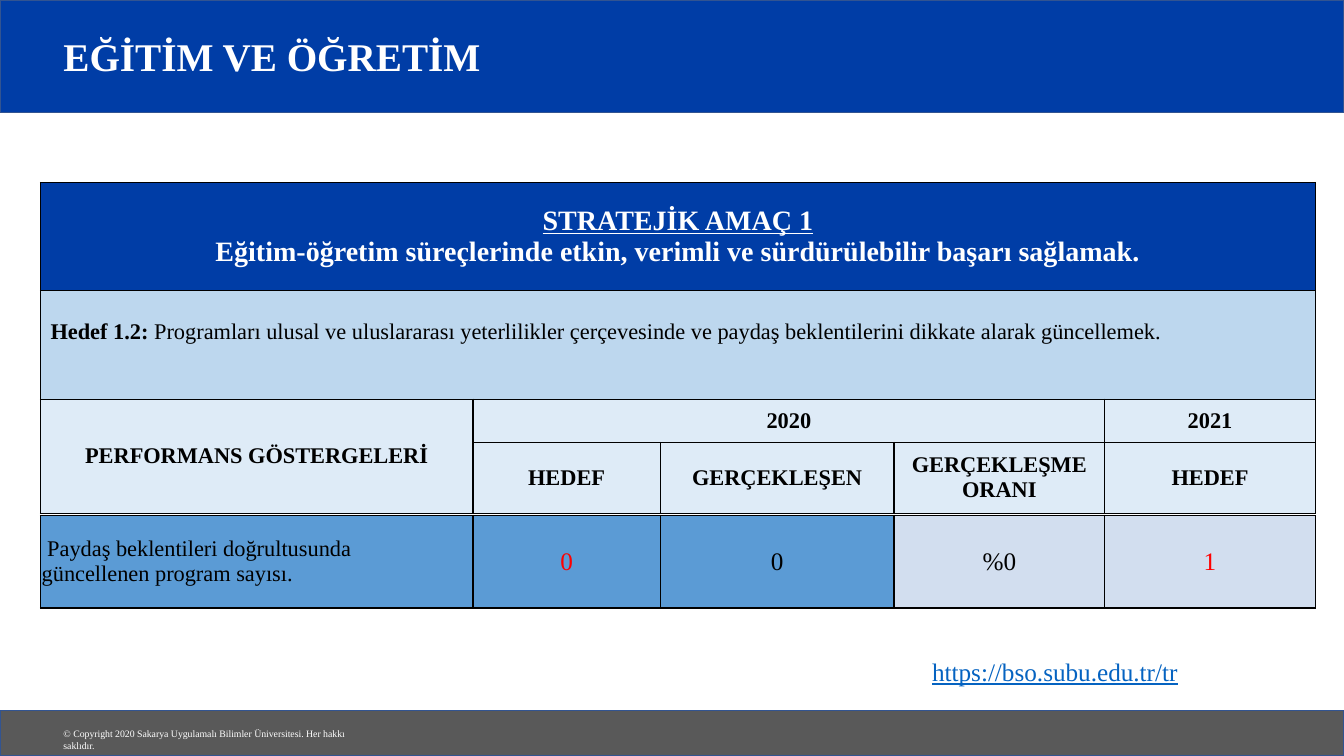
from lxml import etree
from pptx import Presentation
from pptx.dml.color import RGBColor
from pptx.enum.shapes import MSO_SHAPE
from pptx.enum.text import MSO_ANCHOR, PP_ALIGN
from pptx.oxml.ns import qn
from pptx.util import Cm, Pt

RECTANGLE = MSO_SHAPE.RECTANGLE
MIDDLE = MSO_ANCHOR.MIDDLE
LEFT, CENTER, JUSTIFY = PP_ALIGN.LEFT, PP_ALIGN.CENTER, PP_ALIGN.JUSTIFY
FONT = "Times New Roman"
COLORS = {
    "navy": "003DA6", "edge": "325491", "gray": "595959", "white": "FFFFFF",
    "black": "000000", "red": "FF0000", "link": "0563C1", "goal": "BDD7EE",
    "head": "DEEBF7", "measure": "5B9BD5", "result": "D2DEEF",
}


def style(paragraph, size, color, bold=False, underline=False, align=LEFT):
    paragraph.alignment = align
    font = paragraph.font
    font.name, font.size = FONT, Pt(size)
    font.bold, font.underline = bold, underline
    font.color.rgb = RGBColor.from_string(COLORS[color])


def add_grid(top, row_heights):
    """Add a table with the shared columns and thin black cell borders."""
    widths = [10.9, 4.72, 5.89, 5.31, 5.31]
    table = slide.shapes.add_table(
        len(row_heights), len(widths), Cm(1.02), Cm(top),
        Cm(sum(widths)), Cm(sum(row_heights))).table
    table.first_row = table.horz_banding = False
    for column, width in zip(table.columns, widths):
        column.width = Cm(width)
    for row, height in zip(table.rows, row_heights):
        row.height = Cm(height)
    for cell in table.iter_cells():
        cell.vertical_anchor = MIDDLE
        properties = cell._tc.get_or_add_tcPr()
        for side in ("a:lnL", "a:lnR", "a:lnT", "a:lnB"):
            border = etree.SubElement(properties, qn(side), w=str(Pt(1)))
            fill = etree.SubElement(border, qn("a:solidFill"))
            etree.SubElement(fill, qn("a:srgbClr"), val=COLORS["black"])
    return table


presentation = Presentation()
presentation.slide_width, presentation.slide_height = Cm(33.87), Cm(19.05)
slide = presentation.slides.add_slide(presentation.slide_layouts[6])

# Header and footer bars
for top, height, color in [(0, 2.84, "navy"), (17.9, 1.15, "gray")]:
    bar = slide.shapes.add_shape(RECTANGLE, 0, Cm(top), Cm(33.87), Cm(height))
    bar.shadow.inherit = False
    bar.fill.solid()
    bar.fill.fore_color.rgb = RGBColor.from_string(COLORS[color])
    bar.line.color.rgb = RGBColor.from_string(COLORS["edge"])
    bar.line.width = Pt(1)

# Title, copyright line and link
texts = [
    ("EĞİTİM VE ÖĞRETİM", (1.35, 0.48, 28.02, 1.85), 28, "white", True, False),
    ("© Copyright 2020 Sakarya Uygulamalı Bilimler Üniversitesi. Her hakkı saklıdır.",
     (1.35, 18.21, 8.36, 0.56), 7, "white", False, False),
    ("https://bso.subu.edu.tr/tr", (23.24, 16.41, 6.93, 1.02), 18, "link", False, True),
]
for text, place, size, color, bold, underline in texts:
    frame = slide.shapes.add_textbox(*map(Cm, place)).text_frame
    frame.word_wrap = True
    if bold:
        frame.vertical_anchor = MIDDLE
    frame.text = text
    style(frame.paragraphs[0], size, color, bold, underline)

# Strategic aim, goal and column heads
plan = add_grid(4.6, [2.72, 2.74, 1.09, 1.78])
for first, last in [((0, 0), (0, 4)), ((1, 0), (1, 4)),
                    ((2, 0), (3, 0)), ((2, 1), (2, 3))]:
    plan.cell(*first).merge(plan.cell(*last))
for row, color in enumerate(["navy", "goal", "head", "head"]):
    for cell in plan.rows[row].cells:
        cell.fill.solid()
        cell.fill.fore_color.rgb = RGBColor.from_string(COLORS[color])

aim = plan.cell(0, 0).text_frame
aim.text = ("STRATEJİK AMAÇ 1\n"
            "Eğitim-öğretim süreçlerinde etkin, verimli ve sürdürülebilir başarı sağlamak.")
for paragraph, underline in zip(aim.paragraphs, (True, False)):
    style(paragraph, 20, "white", True, underline, CENTER)

plan.cell(1, 0).margin_bottom = Cm(0.8)
goal = plan.cell(1, 0).text_frame.paragraphs[0]
style(goal, 16, "black", align=JUSTIFY)
goal_label = goal.add_run()
goal_label.text = "Hedef 1.2: "
goal_label.font.bold = True
goal.add_run().text = ("Programları ulusal ve uluslararası yeterlilikler çerçevesinde "
                       "ve paydaş beklentilerini dikkate alarak güncellemek.")

heads = {
    (2, 0): "PERFORMANS GÖSTERGELERİ", (2, 1): "2020", (2, 4): "2021",
    (3, 1): "HEDEF", (3, 2): "GERÇEKLEŞEN", (3, 3): "GERÇEKLEŞME ORANI", (3, 4): "HEDEF",
}
for position, text in heads.items():
    cell = plan.cell(*position)
    cell.text = text
    style(cell.text_frame.paragraphs[0], 16, "black", True, align=CENTER)

# Indicator and its values
indicator = add_grid(12.98, [2.34])
values = [
    ("Paydaş beklentileri doğrultusunda\vgüncellenen program sayısı.",
     16, "black", "measure", LEFT, 0.03),
    ("0", 18, "red", "measure", CENTER, 0.08),
    ("0", 18, "black", "measure", CENTER, 0.08),
    ("%0", 18, "black", "result", CENTER, 0.08),
    ("1", 18, "red", "result", CENTER, 0.08),
]
for cell, (text, size, color, fill, align, margin) in zip(indicator.iter_cells(), values):
    cell.margin_left = cell.margin_right = cell.margin_top = cell.margin_bottom = Cm(margin)
    cell.fill.solid()
    cell.fill.fore_color.rgb = RGBColor.from_string(COLORS[fill])
    cell.text = text
    style(cell.text_frame.paragraphs[0], size, color, align=align)
first_line = indicator.cell(0, 0).text_frame.paragraphs[0]
first_line._p.get_or_add_pPr().set("indent", str(Cm(0.14)))

presentation.save("out.pptx")
